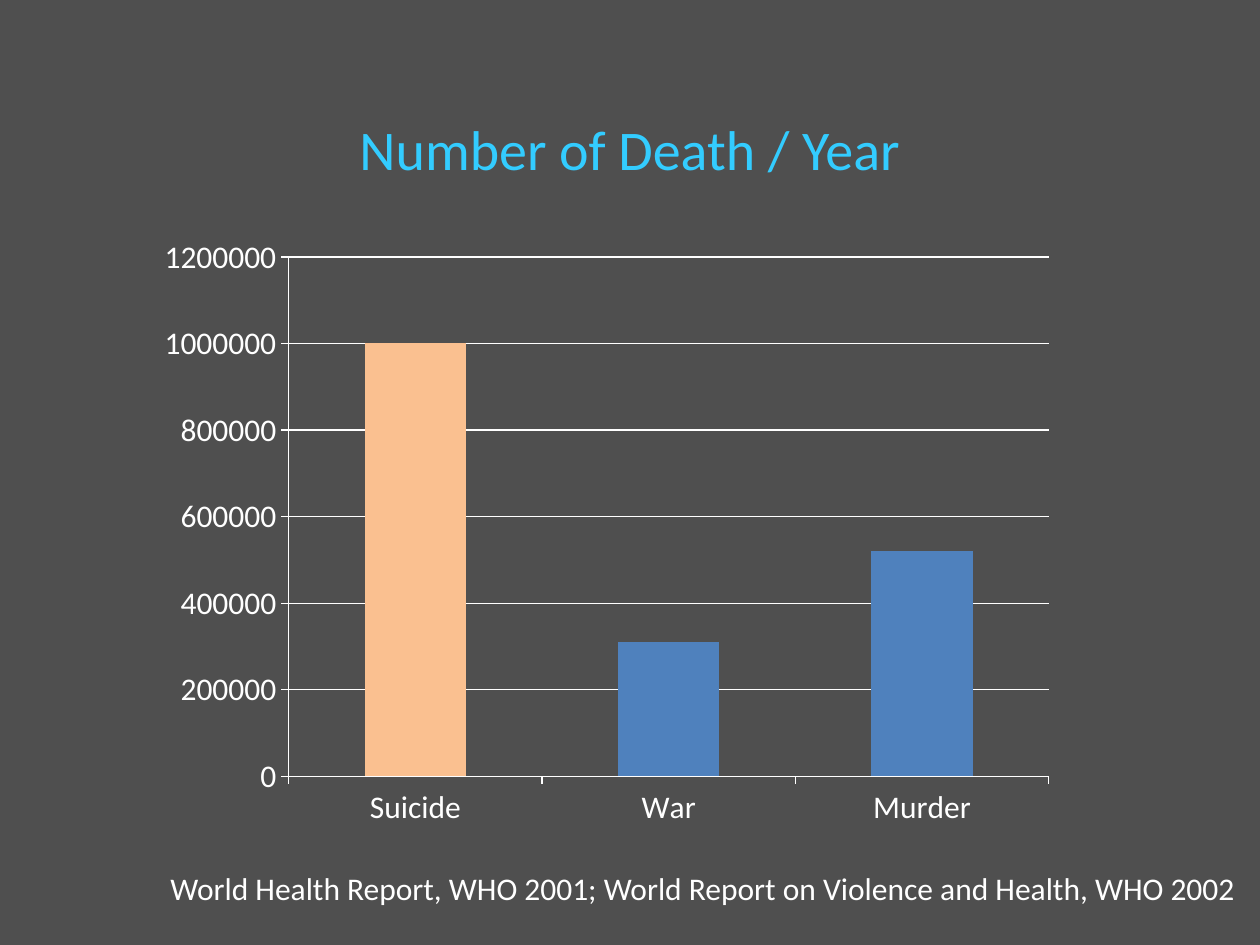
"""Build a slide with a column chart of yearly deaths by cause."""
from pptx import Presentation
from pptx.chart.data import CategoryChartData
from pptx.dml.color import RGBColor
from pptx.enum.chart import XL_CHART_TYPE, XL_TICK_MARK
from pptx.enum.text import MSO_ANCHOR, PP_ALIGN
from pptx.util import Inches, Pt

COLUMNS = XL_CHART_TYPE.COLUMN_CLUSTERED
TICK_OUT, TICK_NONE = XL_TICK_MARK.OUTSIDE, XL_TICK_MARK.NONE
MIDDLE = MSO_ANCHOR.MIDDLE
CENTER = PP_ALIGN.CENTER
FONT = "Calibri"
COLORS = {
    "background": "4F4F4F",
    "title": "33CCFF",
    "text": "FFFFFF",
    "bar": "4F81BD",
    "highlight": "FAC090",
}
DEATHS = {"Suicide": 1000000, "War": 310000, "Murder": 520000}


def color(name):
    return RGBColor.from_string(COLORS[name])


def style_font(font, size, color_name):
    font.name = FONT
    font.size = Pt(size)
    font.bold = False
    font.color.rgb = color(color_name)


deck = Presentation()
deck.slide_width, deck.slide_height = Inches(10), Inches(7.5)
page = deck.slides.add_slide(deck.slide_layouts[5])
page.background.fill.solid()
page.background.fill.fore_color.rgb = color("background")

title = page.shapes.title
title.left, title.top = Inches(0.11), Inches(0.55)
title.width, title.height = Inches(9.78), Inches(1.25)
title.text_frame.text = "Number of Death / Year"
title.text_frame.vertical_anchor = MIDDLE
heading = title.text_frame.paragraphs[0]
heading.alignment = CENTER
style_font(heading.runs[0].font, 32, "title")

source_box = page.shapes.add_textbox(Inches(1.16), Inches(6.85), Inches(8.84), Inches(0.4))
source_box.text_frame.word_wrap = True
source_box.text_frame.text = (
    "World Health Report, WHO 2001; World Report on Violence and Health, WHO 2002"
)
source_para = source_box.text_frame.paragraphs[0]
source_para.alignment = CENTER
source_para.space_before = Pt(3.6)
style_font(source_para.runs[0].font, 18, "text")

data = CategoryChartData()
data.categories = list(DEATHS)
data.add_series("Series 1", list(DEATHS.values()))
chart = page.shapes.add_chart(
    COLUMNS, Inches(1.16), Inches(1.79), Inches(7.31), Inches(4.87), data
).chart
chart.has_title = False
chart.has_legend = False
style_font(chart.font, 18, "text")

for axis in (chart.category_axis, chart.value_axis):
    axis.major_tick_mark = TICK_OUT
    axis.minor_tick_mark = TICK_NONE
    axis.format.line.color.rgb = color("text")
    axis.format.line.width = Pt(0.75)

deaths_axis = chart.value_axis
deaths_axis.minimum_scale = 0
deaths_axis.maximum_scale = 1200000
deaths_axis.major_unit = 200000
deaths_axis.has_major_gridlines = True
gridlines = deaths_axis.major_gridlines.format.line
gridlines.color.rgb = color("text")
gridlines.width = Pt(0.75)

plot = chart.plots[0]
plot.gap_width = 150
plot.vary_by_categories = False
bars = plot.series[0]
for bar, color_name in ((bars, "bar"), (bars.points[0], "highlight")):
    bar.format.fill.solid()
    bar.format.fill.fore_color.rgb = color(color_name)

deck.save("out.pptx")
